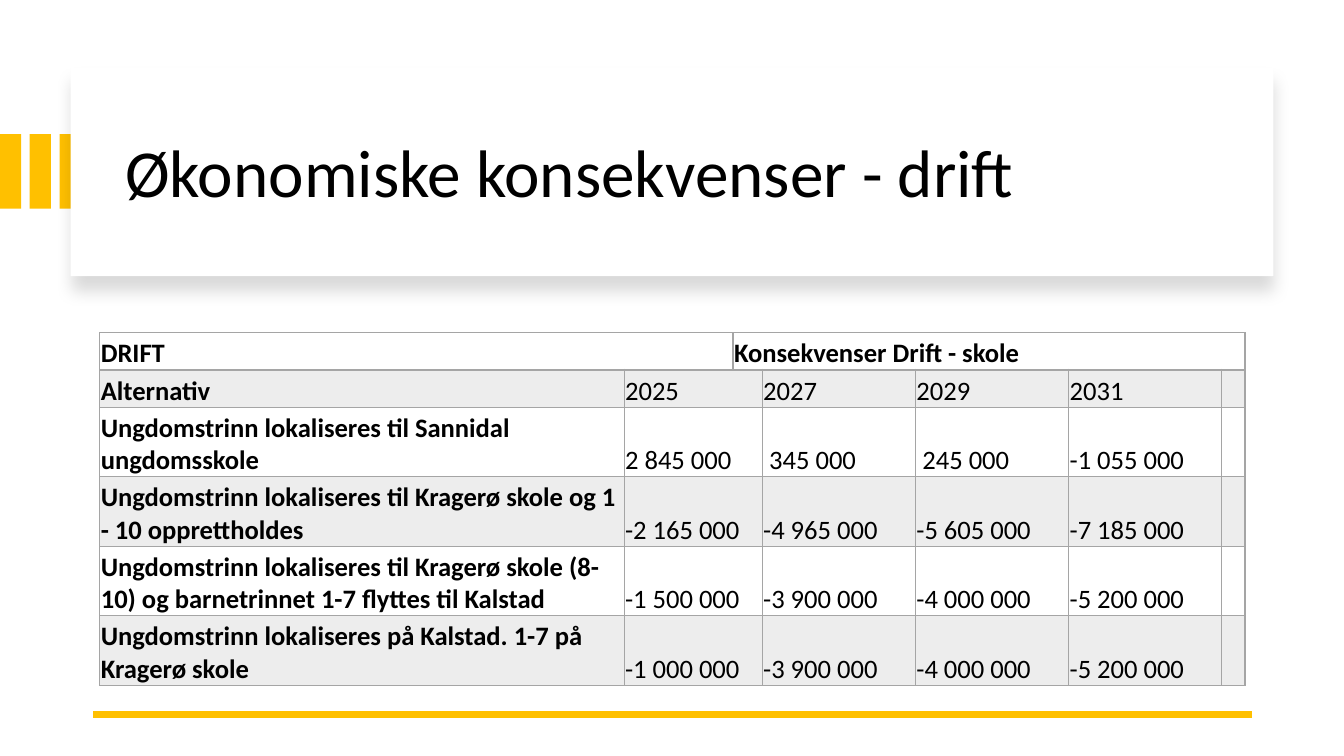
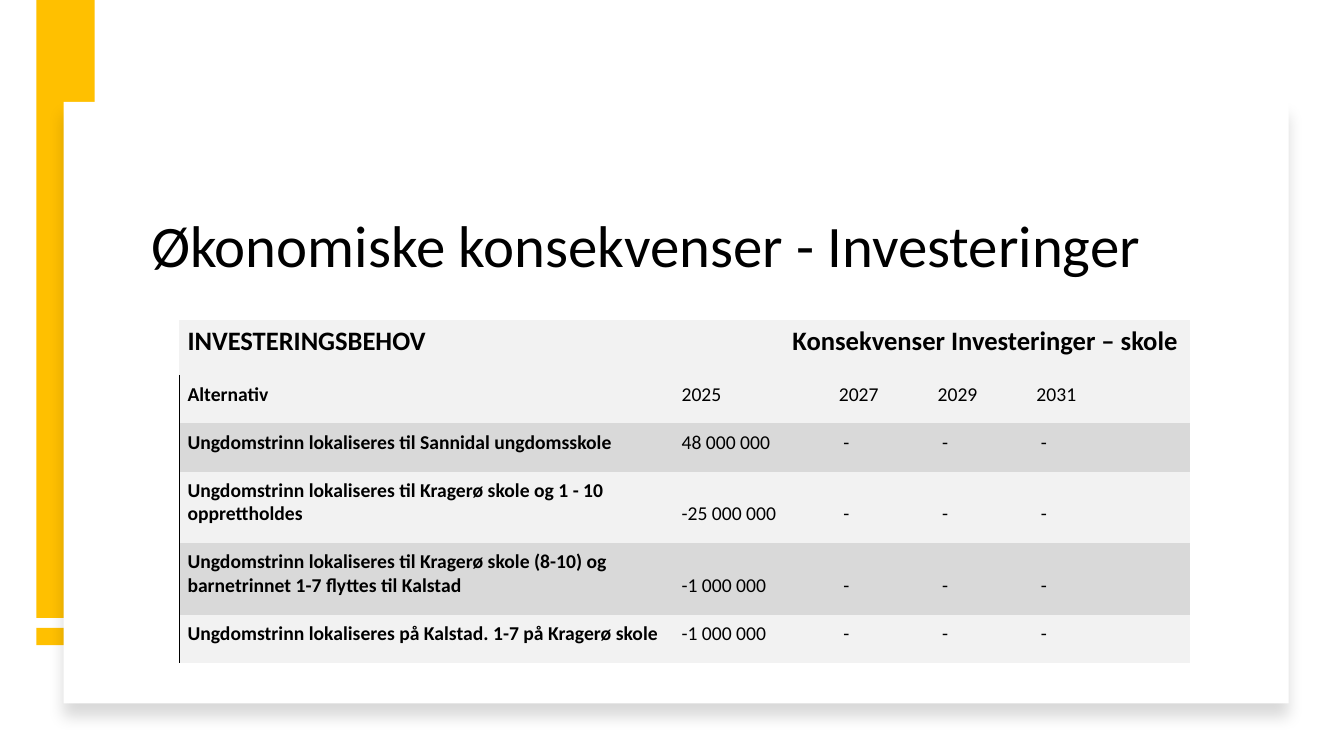
from dataclasses import dataclass

from lxml import etree
from pptx import Presentation
from pptx import util as u
from pptx.dml.color import RGBColor
from pptx.enum import shapes, text
from pptx.oxml import parse_xml
from pptx.oxml.ns import nsdecls, qn

HUES = {"gold": "FFC000", "white": "FFFFFF", "black": "000000", "grid": "A5A5A5",
        "tint": "EDEDED", "pale": "F2F2F2", "grey": "D9D9D9"}
FONT = "Calibri"
NO_STYLE = "{2D5ABB26-0587-4C30-8999-92F81FD0307C}"

YEARS = ["2025", "2027", "2029", "2031"]
LABELS = ["Alternativ",
          "Ungdomstrinn lokaliseres til Sannidal ungdomsskole",
          "Ungdomstrinn lokaliseres til Kragerø skole og 1 - 10 opprettholdes",
          "Ungdomstrinn lokaliseres til Kragerø skole (8-10) og barnetrinnet 1-7 flyttes til Kalstad",
          "Ungdomstrinn lokaliseres på Kalstad. 1-7 på Kragerø skole"]


@dataclass
class Box:
    left: float
    top: float
    width: float
    height: float

    def emu(self) -> list[u.Length]:
        return [u.Inches(n) for n in (self.left, self.top, self.width, self.height)]


@dataclass
class Title:
    text: str
    box: Box
    size: int
    anchor: text.MSO_ANCHOR


@dataclass
class Grid:
    left: float
    top: float
    cols: list[float]
    rows: list[float]
    heads: tuple[str, str]
    values: list[list[str]]
    fills: list[str]          # one per row
    pads: tuple[float, float, float, float]
    size: int                 # body text; the head row is always 19 pt
    ruled: bool               # full grid, or only a left rule on the body


@dataclass
class Page:
    bars: list[Box]
    card: Box
    title: Title
    grid: Grid


def color(name: str) -> RGBColor:
    return RGBColor.from_string(HUES[name])


def add_rect(slide, box: Box, hue: str):
    rect = slide.shapes.add_shape(shapes.MSO_SHAPE.RECTANGLE, *box.emu())
    rect.fill.solid()
    rect.fill.fore_color.rgb = color(hue)
    rect.line.fill.background()
    rect.shadow.inherit = False
    return rect


def add_card(slide, box: Box) -> None:
    card = add_rect(slide, box, "white")
    card.element.spPr.find(qn("a:effectLst")).append(parse_xml(
        f'<a:outerShdw {nsdecls("a")} blurRad="{u.Pt(11)}" dist="{u.Pt(10)}" dir="5400000"'
        f' algn="t" rotWithShape="0"><a:srgbClr val="{HUES["black"]}">'
        '<a:alpha val="15000"/></a:srgbClr></a:outerShdw>'))


def add_title(slide, spec_: Title) -> None:
    title = slide.shapes.title
    title.left, title.top, title.width, title.height = spec_.box.emu()
    slide.shapes.element.append(title.element)  # bring in front of the card
    frame = title.text_frame
    frame.text = spec_.text
    frame.word_wrap = True
    frame.auto_size = text.MSO_AUTO_SIZE.NONE
    frame.vertical_anchor = spec_.anchor
    para = frame.paragraphs[0]
    para.alignment = text.PP_ALIGN.LEFT
    para.line_spacing = 0.9
    style(para, spec_.size)


def style(para, size: float, bold: bool = False) -> None:
    font = para.font
    font.name, font.size, font.bold = FONT, u.Pt(size), bold
    font.color.rgb = color("black")


def add_edges(cell, edges: dict[str, float], hue: str) -> None:
    props = cell._tc.get_or_add_tcPr()
    for spot, (side, width) in enumerate(edges.items()):
        props.insert(spot, parse_xml(
            f'<a:ln{side} {nsdecls("a")} w="{u.Pt(width)}"><a:solidFill>'
            f'<a:srgbClr val="{HUES[hue]}"/></a:solidFill></a:ln{side}>'))


def add_grid(slide, grid: Grid) -> None:
    box = Box(grid.left, grid.top, sum(grid.cols), sum(grid.rows))
    frame = slide.shapes.add_table(len(grid.rows), len(grid.cols), *box.emu())
    table = frame.table
    table.first_row = table.horz_banding = False
    next(frame.element.iter(qn("a:tableStyleId"))).text = NO_STYLE
    for col, width in zip(table.columns, grid.cols):
        col.width = u.Inches(width)
    for row, height in zip(table.rows, grid.rows):
        row.height = u.Inches(height)

    # Columns 1 and 2 are split only in the head row
    first, second = grid.heads
    words = [[first, "", second, "", "", "", ""]]
    for label, nums in zip(LABELS, [YEARS] + grid.values):
        words.append([label, nums[0], "", *nums[1:], ""])

    for r, line in enumerate(words):
        head = r == 0
        for c, word in enumerate(line):
            cell = table.cell(r, c)
            cell.text = word
            cell.vertical_anchor = text.MSO_ANCHOR.BOTTOM
            (cell.margin_left, cell.margin_top,
             cell.margin_right, cell.margin_bottom) = map(u.Inches, grid.pads)
            cell.fill.solid()
            cell.fill.fore_color.rgb = color(grid.fills[r])
            style(cell.text_frame.paragraphs[0], 19 if head else grid.size, head or c == 0)
            if grid.ruled:
                add_edges(cell, {"L": 1, "R": 1, "T": 1, "B": 2 if head else 1}, "grid")
            elif c == 0 and not head:
                add_edges(cell, {"L": 1}, "black")
        for start, end in [(0, 1), (2, 6)] if head else [(1, 2)]:
            table.cell(r, start).merge(table.cell(r, end))


def add_rule(slide, left: float, right: float, y: float) -> None:
    rule = slide.shapes.add_connector(
        shapes.MSO_CONNECTOR.STRAIGHT, *map(u.Inches, (right, y, left, y)))
    rule.line.color.rgb = color("gold")
    rule.line.width = u.Pt(4.5)
    etree.SubElement(rule.element.spPr, qn("a:effectLst"))


def add_page(deck, page: Page):
    slide = deck.slides.add_slide(deck.slide_layouts[5])
    for bar in page.bars:
        add_rect(slide, bar, "gold")
    add_card(slide, page.card)
    add_title(slide, page.title)
    add_grid(slide, page.grid)
    return slide


# Running costs
DRIFT = Page(
    bars=[Box(0.295 * i, 1.33, 0.21, 0.74) for i in range(3)],
    card=Box(0.7, 0.67, 11.93, 2.07),
    title=Title("Økonomiske konsekvenser - drift", Box(1.14, 0.89, 11.13, 1.7),
                48, text.MSO_ANCHOR.MIDDLE),
    grid=Grid(
        0.99, 3.3,
        cols=[5.2, 1.08, 0.29] + [1.52] * 3 + [0.23],
        rows=[0.37] * 2 + [0.69] * 4,
        heads=("DRIFT", "Konsekvenser Drift - skole"),
        values=[["2 845 000", " 345 000", " 245 000", "-1 055 000"],
                ["-2 165 000", "-4 965 000", "-5 605 000", "-7 185 000"],
                ["-1 500 000", "-3 900 000", "-4 000 000", "-5 200 000"],
                ["-1 000 000", "-3 900 000", "-4 000 000", "-5 200 000"]],
        fills=["white", "tint"] * 3,
        pads=(0.01, 0.01, 0.01, 0), size=19, ruled=True))

# Investments
INVEST = Page(
    bars=[Box(0.36, 6.23, 0.58, 0.17), Box(0.36, 0, 0.58, 6.13)],
    card=Box(0.63, 1.01, 12.15, 5.97),
    title=Title("Økonomiske konsekvenser - Investeringer", Box(1.4, 1.35, 10.77, 1.48),
                42, text.MSO_ANCHOR.BOTTOM),
    grid=Grid(
        1.78, 3.17,
        cols=[4.9, 1.1, 0.46] + [0.98] * 3 + [0.62],
        rows=[0.55, 0.48, 0.48, 0.71, 0.71, 0.48],
        heads=("INVESTERINGSBEHOV", "Konsekvenser Investeringer – skole"),
        values=[[need] + [" -"] * 3 for need in
                ("48 000 000", "-25 000 000", "-1 000 000", "-1 000 000")],
        fills=["pale"] + ["pale", "grey"] * 2 + ["pale"],
        pads=(0.08, 0.02, 0.01, 0.17), size=14, ruled=False))


def main() -> None:
    deck = Presentation()
    deck.slide_width, deck.slide_height = u.Inches(13.33), u.Inches(7.5)
    drift = add_page(deck, DRIFT)
    add_rule(drift, 0.92, 12.42, 7.09)
    add_page(deck, INVEST)
    deck.save("out.pptx")


if __name__ == "__main__":
    main()
